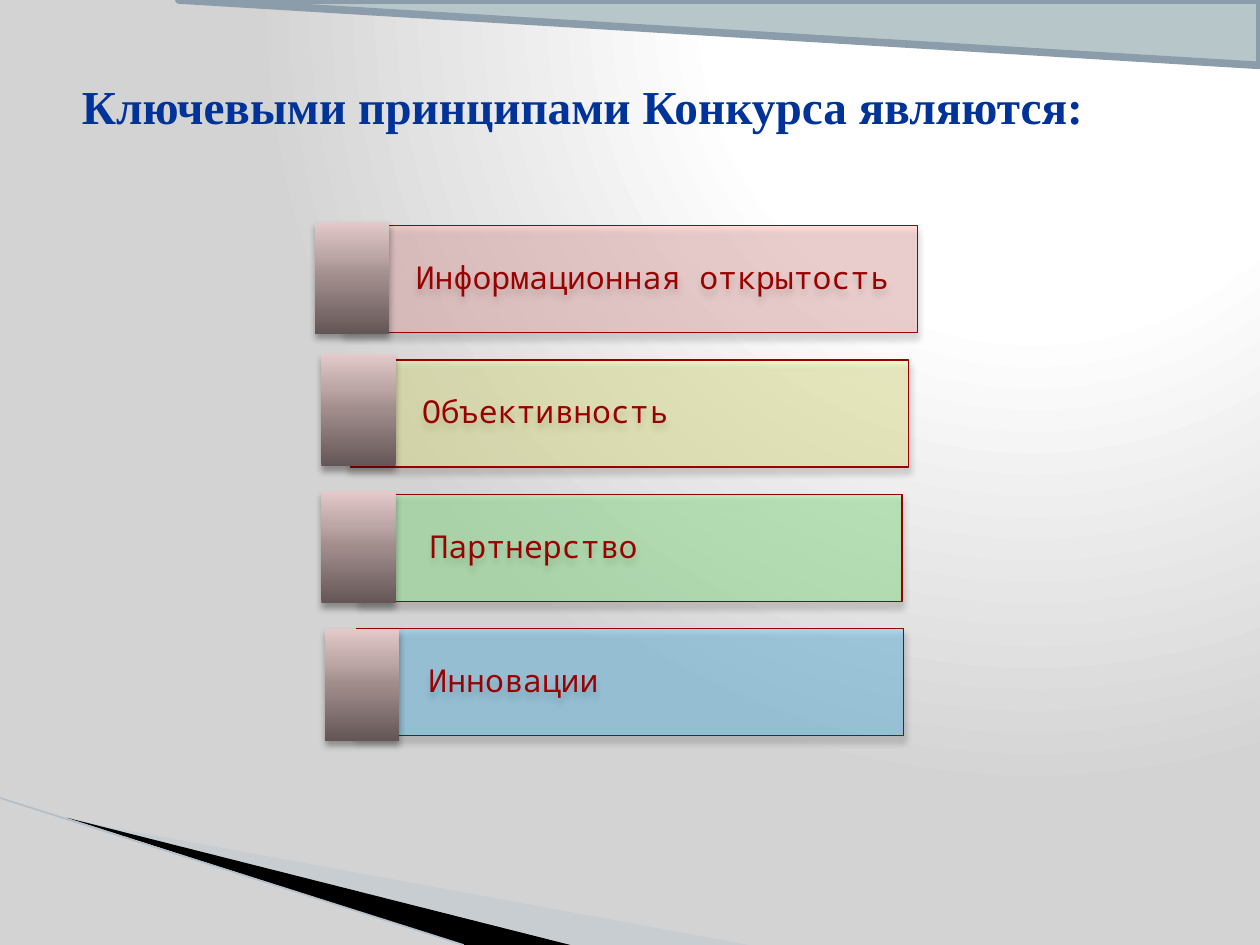
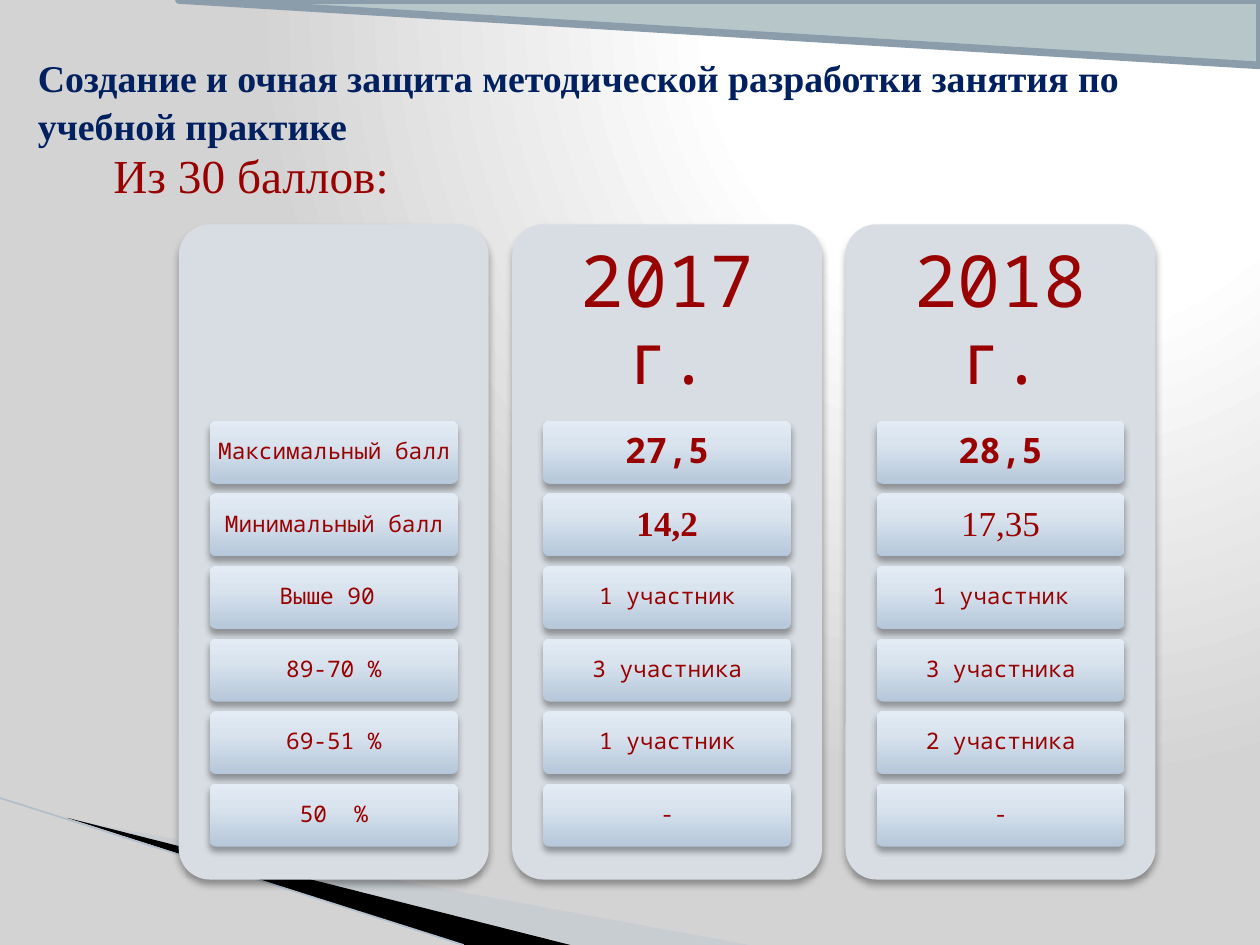
from dataclasses import dataclass
from typing import Any, NamedTuple

from lxml import etree
from pptx import Presentation
from pptx.dml.color import RGBColor
from pptx.enum.shapes import MSO_CONNECTOR, MSO_SHAPE
from pptx.enum.text import MSO_ANCHOR, MSO_AUTO_SIZE, PP_ALIGN
from pptx.oxml import parse_xml
from pptx.oxml.ns import nsdecls, qn
from pptx.util import Pt


# Theme: colours, fonts and type sizes
@dataclass(frozen=True)
class Theme:
    serif: str = "Times New Roman"
    mono: str = "Noto Sans Mono"
    heading: str = "003399"
    subject: str = "002060"
    text: str = "990000"
    column: str = "D8DDE3"
    wedge: str = "B7C7C9"
    wedge_edge: str = "8B9DAB"
    haze: str = "B7C4D0"
    ray: str = "000000"
    ray_edge: str = "B1BECB"
    backdrop: tuple = ((0, "FFFFFF"), (40, "FFFFFF"), (100, "D3D3D3"))
    marker: tuple = ((0, "645656"), (50, "A18C8C"), (70, "BCA6A6"), (100, "E4CACA"))
    cell: tuple = ((0, "B5C7D9"), (65, "DAE4EF"), (100, "E3ECF5"))
    heading_size: float = 27
    subject_size: float = 21.6
    year_size: float = 41
    score_size: float = 20
    bar_size: float = 18
    cell_size: float = 13


THEME = Theme()
UPWARD = '<a:lin ang="16200000" scaled="0"/>'
FROM_TOP_RIGHT = '<a:path path="circle"><a:fillToRect l="65000" b="98000"/></a:path>'


class Area(NamedTuple):
    left: float
    top: float
    width: float
    height: float

    def points(self) -> list:
        return [Pt(value) for value in self]


class Style(NamedTuple):
    size: float
    color: str = THEME.text
    name: str = THEME.mono
    bold: bool = False


class Principle(NamedTuple):
    label: str
    color: str
    left: float
    width: float
    marker_left: float
    marker_top: float


class Column(NamedTuple):
    year: str
    values: tuple
    leading: tuple = ()  # styles of the first cells


SMALL = Style(THEME.cell_size)
SCORE = Style(THEME.score_size, bold=True)
SERIF_SCORE = Style(THEME.score_size, name=THEME.serif)

PRINCIPLES = [
    Principle("Информационная открытость", "FFB8B8", 196.6, 327.6, 180, 126.7),
    Principle("Объективность", "FFFF99", 200.2, 319, 183.6, 202.3),
    Principle("Партнерство", "99FF99", 204.5, 311, 183.6, 280.8),
    Principle("Инновации", "66CCFF", 203.8, 312.5, 185.8, 359.3),
]
COLUMNS = [
    Column("", ("Максимальный балл", "Минимальный балл", "Выше 90 ",
                "89-70 %", "69-51 %", "50  %")),
    Column("2017 г.", ("27,5", "14,2", "1 участник", "3 участника", "1 участник", "-"),
           (SCORE, SERIF_SCORE._replace(bold=True))),
    Column("2018 г.", ("28,5", "17,35", "1 участник", "3 участника", "2 участника", "-"),
           (SCORE, SERIF_SCORE)),
]


# Formatting helpers
def apply_format(target: Any, values: dict) -> None:
    for name, value in values.items():
        setattr(target, name, value)


def set_gradient(fill: Any, element: Any, stops: tuple, direction: str) -> None:
    fill.solid()
    solid = element.find(".//" + qn("a:solidFill"))
    marks = "".join(f'<a:gs pos="{place * 1000}"><a:srgbClr val="{color}"/></a:gs>'
                    for place, color in stops)
    solid.getparent().replace(solid, parse_xml(
        f'<a:gradFill {nsdecls("a")} rotWithShape="1"><a:gsLst>{marks}</a:gsLst>'
        f'{direction}</a:gradFill>'))


def set_fill(shape: Any, color: str, opacity: int = 100) -> None:
    shape.fill.solid()
    shape.fill.fore_color.rgb = RGBColor.from_string(color)
    if opacity < 100:
        tint = shape.element.spPr.find(".//" + qn("a:srgbClr"))
        etree.SubElement(tint, qn("a:alpha"), val=str(opacity * 1000))


def set_line(shape: Any, color: str, width: float) -> None:
    shape.line.color.rgb = RGBColor.from_string(color)
    shape.line.width = Pt(width)


def set_shadow(shape: Any) -> None:
    effects = shape.element.spPr.find(qn("a:effectLst"))
    effects.append(parse_xml(
        f'<a:outerShdw {nsdecls("a")} blurRad="{Pt(4)}" dist="{Pt(3)}" dir="5400000" '
        'rotWithShape="0"><a:srgbClr val="000000"><a:alpha val="35000"/></a:srgbClr>'
        '</a:outerShdw>'))


def write(box: Any, text: str, style: Style, align: Any = PP_ALIGN.LEFT,
          anchor: Any = MSO_ANCHOR.MIDDLE, spacing: float = 0.9,
          insets: tuple = (7.2, 3.6, 7.2, 3.6)) -> None:
    sides = ("margin_left", "margin_top", "margin_right", "margin_bottom")
    frame = box.text_frame
    apply_format(frame, {"word_wrap": True, "auto_size": MSO_AUTO_SIZE.NONE,
                         "vertical_anchor": anchor,
                         **{side: Pt(inset) for side, inset in zip(sides, insets)}})
    para = frame.paragraphs[0]
    apply_format(para, {"alignment": align, "line_spacing": spacing, "space_before": Pt(0)})
    span = para.add_run()
    span.text = text
    apply_format(span.font, {"name": style.name, "size": Pt(style.size), "bold": style.bold})
    span.font.color.rgb = RGBColor.from_string(style.color)


def add_block(page: Any, kind: Any, area: Area, shadow: bool = True) -> Any:
    box = page.shapes.add_shape(kind, *area.points())
    box.shadow.inherit = False
    box.line.fill.background()
    if shadow:
        set_shadow(box)
    if kind == MSO_SHAPE.ROUNDED_RECTANGLE:
        box.adjustments[0] = 0.1
    return box


def fill_placeholder(box: Any, area: Area, text: str, style: Style, **options: Any) -> None:
    apply_format(box, dict(zip(("left", "top", "width", "height"), area.points())))
    properties = box.text_frame.paragraphs[0]._p.get_or_add_pPr()
    apply_attributes = {"marL": "0", "indent": "0"}
    for name, value in apply_attributes.items():
        properties.set(name, value)
    etree.SubElement(properties, qn("a:buNone"))
    write(box, text, style, **options)


# Backdrop and corner decoration, kept on the slide master
def add_ray(page: Any, color: str, opacity: int, corners: list) -> Any:
    first, *others = [(Pt(x), Pt(y)) for x, y in corners]
    builder = page.shapes.build_freeform(*first)
    builder.add_line_segments(others)
    ray = builder.convert_to_shape()
    ray.shadow.inherit = False
    ray.line.fill.background()
    set_fill(ray, color, opacity)
    return ray


def decorate_master(deck: Any, page: Any) -> None:
    master = deck.slide_master
    set_gradient(master.background.fill, master.element, THEME.backdrop, FROM_TOP_RIGHT)

    haze = add_ray(page, THEME.haze, 40, [(39.6, 468.4), (428, 540), (328, 540)])
    ray = add_ray(page, THEME.ray, 100, [(38.2, 467.3), (326, 540), (265, 540)])
    edge = page.shapes.add_connector(MSO_CONNECTOR.STRAIGHT, Pt(0), Pt(456), Pt(265), Pt(540))
    set_line(edge, THEME.ray_edge, 0.95)
    etree.SubElement(edge.element.spPr, qn("a:effectLst"))

    wedge = add_block(page, MSO_SHAPE.RIGHT_TRIANGLE, Area(102.2, 0, 617.8, 37.4), shadow=False)
    wedge.rotation = 180
    set_fill(wedge, THEME.wedge)
    set_line(wedge, THEME.wedge_edge, 4.33)

    for number, part in enumerate((haze, ray, edge, wedge), start=20):
        part.element.find(".//" + qn("p:cNvPr")).set("id", str(number))
        master.element.cSld.spTree.append(part.element)


# Slide 1: principles as coloured bars with markers
def build_principles(page: Any) -> None:
    fill_placeholder(page.shapes.title, Area(39.6, 40.4, 677, 50),
                     "Ключевыми принципами Конкурса являются:",
                     Style(THEME.heading_size, THEME.heading, THEME.serif, True),
                     anchor=MSO_ANCHOR.TOP, spacing=1.0)
    for row, principle in enumerate(PRINCIPLES):
        bar = add_block(page, MSO_SHAPE.RECTANGLE,
                        Area(principle.left, 128.9 + 76.8 * row, principle.width, 61.2))
        set_fill(bar, principle.color, 40)
        set_line(bar, THEME.text, 0.75)
        write(bar, principle.label, Style(THEME.bar_size), insets=(41, 5, 5, 5))
        marker = add_block(page, MSO_SHAPE.RECTANGLE,
                           Area(principle.marker_left, principle.marker_top, 42.5, 64))
        set_gradient(marker.fill, marker.element, THEME.marker, UPWARD)


# Slide 2: scores by year in three columns
def build_scores(page: Any) -> None:
    fill_placeholder(page.shapes.title, Area(14.4, 37.4, 671, 39.6),
                     "Создание и очная защита методической разработки занятия по учебной практике",
                     Style(THEME.subject_size, THEME.subject, THEME.serif, True), spacing=1.06)
    fill_placeholder(page.placeholders[1], Area(57.6, 80, 648, 356.4), "Из 30 баллов:",
                     Style(THEME.heading_size, name=THEME.serif),
                     anchor=MSO_ANCHOR.TOP, spacing=1.0)
    for index, column in enumerate(COLUMNS):
        left = 102.2 + 190.5 * index
        panel = add_block(page, MSO_SHAPE.ROUNDED_RECTANGLE, Area(left, 128.2, 177.1, 374.4))
        set_fill(panel, THEME.column)
        if column.year:
            year = page.shapes.add_textbox(*Area(left, 128.2, 177.1, 112.3).points())
            write(year, column.year, Style(THEME.year_size), PP_ALIGN.CENTER, insets=(12.2,) * 4)
        for row, value in enumerate(column.values):
            cell = add_block(page, MSO_SHAPE.ROUNDED_RECTANGLE,
                             Area(left + 17.7, 240.5 + 41.47 * row, 141.8, 36))
            set_gradient(cell.fill, cell.element, THEME.cell, UPWARD)
            style = column.leading[row] if row < len(column.leading) else SMALL
            write(cell, value, style, PP_ALIGN.CENTER, insets=(2.9, 2.2, 2.9, 2.2))


def main() -> None:
    deck = Presentation()
    apply_format(deck, {"slide_width": Pt(720), "slide_height": Pt(540)})
    title_only, title_and_body = deck.slide_layouts[5], deck.slide_layouts[1]
    principles = deck.slides.add_slide(title_only)
    decorate_master(deck, principles)
    build_principles(principles)
    build_scores(deck.slides.add_slide(title_and_body))
    deck.save("out.pptx")


if __name__ == "__main__":
    main()
